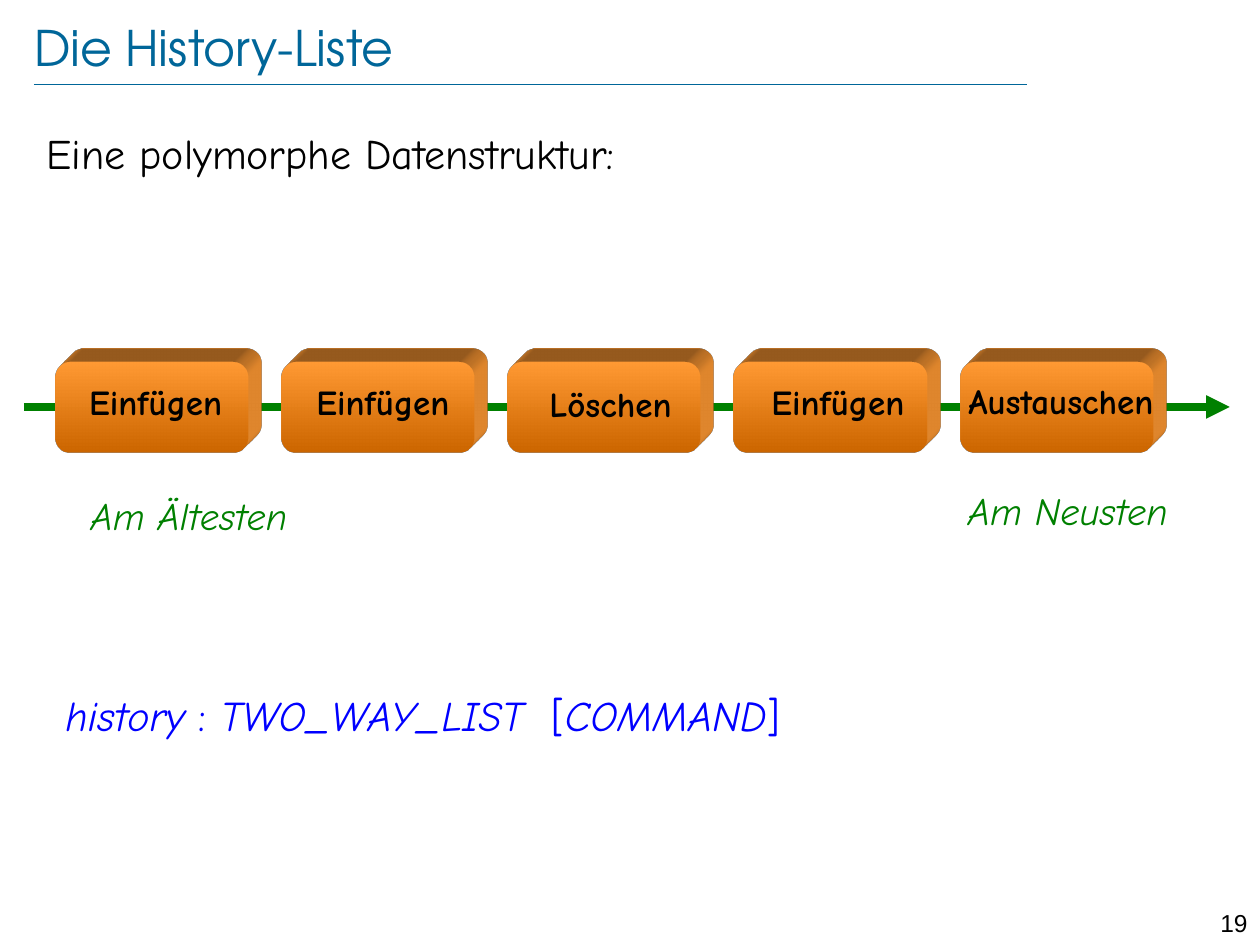
from lxml.etree import SubElement
from pptx import Presentation
from pptx.dml.color import RGBColor
from pptx.enum.shapes import MSO_CONNECTOR as Connector, MSO_SHAPE as Shape
from pptx.enum.text import MSO_ANCHOR as Anchor, PP_ALIGN as Align
from pptx.oxml import parse_xml
from pptx.oxml.ns import nsdecls, qn
from pptx.util import Inches, Pt

BODY_FONT = "Comic Neue"
TITLE_FONT = "TeX Gyre Adventor"
BLACK, BLUE, GREEN, TEAL = "000000", "0000FF", "008000", "006699"
FACE_TOP, FACE_BOTTOM = "FF9933", "CC6600"

LIST_LEFT, LIST_TOP, PITCH = 0.44, 2.87, 1.795
BLOCK_WIDTH, BLOCK_HEIGHT = 1.53, 0.72
COMMANDS = [((0.44, 2.97, 1.59, 0.48), "Einfügen"),
            ((2.26, 2.97, 1.56, 0.48), "Einfügen"),
            ((4.15, 2.99, 1.39, 0.44), "Löschen"),
            ((5.86, 2.97, 1.58, 0.48), "Einfügen"),
            ((7.47, 2.96, 1.9, 0.44), "Austauschen")]
AGES = [((0.32, 3.86, 2.36, 0.47), "Am Ältesten"),
        ((7.4, 3.82, 2.15, 0.47), "Am Neusten")]

SCENE = f"""<a:scene3d {nsdecls('a')}>
  <a:camera prst="legacyObliqueTopRight"/>
  <a:lightRig rig="legacyFlat3" dir="b"/>
</a:scene3d>"""
EXTRUSION = f"""<a:sp3d {nsdecls('a')} extrusionH="277800" prstMaterial="legacyMatte">
  <a:bevelT w="13500" h="13500" prst="angle"/>
  <a:bevelB w="13500" h="13500" prst="angle"/>
  <a:extrusionClr><a:srgbClr val="{FACE_TOP}"/></a:extrusionClr>
</a:sp3d>"""


def color(hex_code):
    """Turn a hex string into a colour."""
    return RGBColor.from_string(hex_code)


def style(paragraph, size, hex_code, name=BODY_FONT, align=Align.LEFT):
    """Format a whole paragraph and return its font."""
    paragraph.alignment = align
    font = paragraph.font
    font.name, font.size = name, Pt(size)
    font.color.rgb = color(hex_code)
    return font


def add_text(slide, box, text, size, hex_code, name=BODY_FONT, align=Align.LEFT):
    """Add a wrapped one-paragraph text box and return the paragraph."""
    frame = slide.shapes.add_textbox(*map(Inches, box)).text_frame
    frame.word_wrap = True
    paragraph = frame.paragraphs[0]
    paragraph.text = text
    style(paragraph, size, hex_code, name, align)
    return paragraph


def add_line(slide, left, right, y, hex_code, width, arrow=False):
    """Draw a horizontal line, with an arrowhead at its right end on request."""
    ends = map(Inches, (left, y, right, y))
    connector = slide.shapes.add_connector(Connector.STRAIGHT, *ends)
    connector.line.color.rgb = color(hex_code)
    connector.line.width = Pt(width)
    properties = connector._element.spPr
    if arrow:
        SubElement(properties.find(qn("a:ln")), qn("a:tailEnd"), type="triangle")
    SubElement(properties, qn("a:effectLst"))


def add_block(slide, left):
    """Draw one extruded rounded block of the list."""
    box = map(Inches, (left, LIST_TOP, BLOCK_WIDTH, BLOCK_HEIGHT))
    block = slide.shapes.add_shape(Shape.ROUNDED_RECTANGLE, *box)
    block.shadow.inherit = False
    block.line.fill.background()
    block.fill.gradient()
    block.fill.gradient_angle = 270
    for stop, hex_code in zip(block.fill.gradient_stops, (FACE_TOP, FACE_BOTTOM)):
        stop.color.rgb = color(hex_code)
    for part in (SCENE, EXTRUSION):
        block._element.spPr.append(parse_xml(part))


def add_title(slide, text):
    """Place the title above its thin rule."""
    title = slide.shapes.title
    title.left, title.top, title.width, title.height = map(
        Inches, (0.27, 0.13, 8.69, 0.48))
    frame = title.text_frame
    frame.margin_left = frame.margin_right = 0
    frame.margin_top = frame.margin_bottom = 0
    frame.vertical_anchor = Anchor.MIDDLE
    frame.text = text
    style(frame.paragraphs[0], 28, TEAL, TITLE_FONT)
    add_line(slide, 0.27, 8.15, 0.67, TEAL, 0.25)


def add_declaration(slide):
    """Write the declaration with names in italics and symbols upright."""
    declaration = add_text(slide, (0.42, 5.42, 9.17, 0.5), "", 24, BLUE)
    parts = ["history ", ": ", "TWO_WAY_LIST  ", "[", "COMMAND", "]"]
    for index, part in enumerate(parts):
        run = declaration.add_run()
        run.text = part
        run.font.italic = index % 2 == 0


def add_history(slide):
    """Draw the arrow, its blocks and their labels."""
    add_line(slide, 0.19, 9.76, LIST_TOP + BLOCK_HEIGHT / 2, GREEN, 4.5, arrow=True)
    for index in range(len(COMMANDS)):
        add_block(slide, LIST_LEFT + index * PITCH)
    for box, command in COMMANDS:
        label = add_text(slide, box, command, 20, BLACK, align=Align.CENTER)
        label.font.bold = True
    for box, age in AGES:
        label = add_text(slide, box, age, 22, GREEN, align=Align.CENTER)
        label.font.italic = True


def main():
    """Build the slide and save it."""
    deck = Presentation()
    deck.slide_width, deck.slide_height = Inches(10), Inches(7.5)
    slide = deck.slides.add_slide(deck.slide_layouts[5])
    add_title(slide, "Die History-Liste")
    add_text(slide, (0.27, 0.96, 9.4, 6.17), "Eine polymorphe Datenstruktur:", 24, BLACK)
    add_declaration(slide)
    add_history(slide)
    add_text(slide, (9.45, 7.16, 0.55, 0.24), "19", 14, BLACK, "Arial", Align.RIGHT)
    deck.save("out.pptx")


if __name__ == "__main__":
    main()
